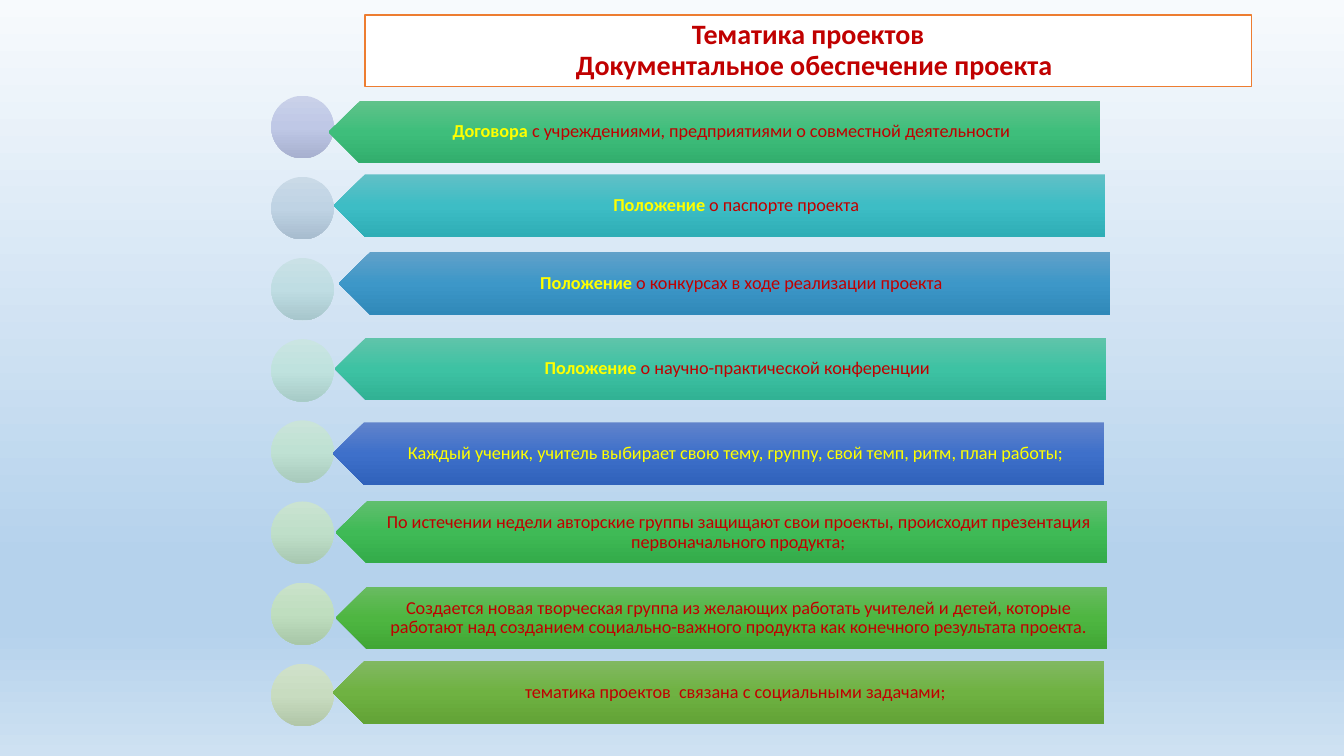
from dataclasses import dataclass

from lxml.etree import SubElement
from pptx import Presentation
from pptx.dml.color import RGBColor
from pptx.dml.fill import FillFormat
from pptx.enum.shapes import MSO_SHAPE as Shape
from pptx.enum.text import MSO_ANCHOR as Anchor, PP_ALIGN as Align
from pptx.oxml.ns import qn
from pptx.shapes.shapetree import GroupShapes
from pptx.slide import Slide
from pptx.text.text import _Paragraph as Paragraph
from pptx.util import Inches, Pt

Stops = tuple[tuple[int, str], ...]


@dataclass(frozen=True)
class Theme:
    font: str = "Calibri"
    title_size: float = 20
    body_size: float = 13
    red: str = "C00000"
    yellow: str = "FFFF00"
    white: str = "FFFFFF"
    orange: str = "ED7D31"
    sky: Stops = ((0, "F7FAFD"), (74, "B5D2EC"), (83, "B5D2EC"), (100, "CEE1F2"))


@dataclass(frozen=True)
class Topic:
    keyword: str
    detail: str
    left: float
    top: float
    arrow_colors: tuple[str, str, str]
    circle_colors: tuple[str, str, str]
    detail_color: str = Theme.red


THEME = Theme()

# Row geometry in inches
CIRCLE_LEFT, CIRCLE_TOP, CIRCLE_PITCH = 2.69, 0.95, 0.805
ROW_HEIGHT, ARROW_WIDTH, LABEL_SHIFT = 0.62, 7.65, 0.16

TITLE_LINES = ("Тематика проектов", "Документальное обеспечение проекта")
SECOND_LINE_INDENT = 0.12

TOPICS = [
    Topic("Договора", " с учреждениями, предприятиями о совместной деятельности",
          3.26, 1.0, ("60C28A", "3EBE7B", "32AE6D"), ("CAD1E9", "BFC8E6", "A7B0CF")),
    Topic("Положение", " о паспорте проекта",
          3.31, 1.73, ("61C0C6", "3DBDC5", "2FAEB6"), ("CADAE7", "BFD3E4", "A7BCCE")),
    Topic("Положение", " о конкурсах в ходе реализации проекта",
          3.36, 2.5, ("61A1C9", "3D97C8", "3089B9"), ("CAE1E6", "BFDDE3", "A7C6CC")),
    Topic("Положение", " о научно-практической конференции",
          3.32, 3.35, ("60C4AA", "3DC2A3", "31B294"), ("CAE5E2", "BFE2DE", "A7CBC7")),
    Topic("", "Каждый ученик, учитель выбирает свою тему, группу, свой темп, ритм, план работы;",
          3.3, 4.19, ("6183CB", "3E70CA", "3062BB"), ("CAE4D9", "BFE1D3", "A8CABC"),
          THEME.yellow),
    Topic("", "По истечении недели авторские группы защищают свои проекты, "
          "происходит презентация первоначального продукта;",
          3.33, 4.97, ("60BF6E", "3FBA56", "33AB49"), ("CAE3D1", "BFDFC9", "A8C8B1")),
    Topic("", "Создается новая творческая группа из желающих работать учителей и детей, "
          "которые работают над созданием социально-важного продукта "
          "как конечного результата проекта.",
          3.33, 5.82, ("69BB61", "4EB641", "41A735"), ("CAE2CA", "BFDEBF", "A8C7A8")),
    Topic("", "тематика проектов  связана с социальными задачами;",
          3.3, 6.56, ("81B861", "6FB242", "62A336"), ("D0E1CA", "C8DCC0", "B1C6A8")),
]


def set_gradient(fill: FillFormat, stops: Stops) -> None:
    """Fill from top to bottom, independent of the shape's rotation."""
    fill.gradient()
    fill.gradient_angle = 270
    gradient = fill._xPr.find(qn("a:gradFill"))
    gradient.set("rotWithShape", "0")
    stop_list = gradient.find(qn("a:gsLst"))
    for default_stop in list(stop_list):
        stop_list.remove(default_stop)
    for percent, color in stops:
        stop = SubElement(stop_list, qn("a:gs"), pos=str(percent * 1000))
        SubElement(stop, qn("a:srgbClr"), val=color)


def format_runs(paragraph: Paragraph, size: float, color: str, bold: bool) -> None:
    paragraph.alignment = Align.CENTER
    paragraph.line_spacing = 0.9
    for run in paragraph.runs:
        font = run.font
        font.name, font.size, font.bold = THEME.font, Pt(size), bold
        font.color.rgb = RGBColor.from_string(color)


def add_title(slide: Slide) -> None:
    title = slide.shapes.title
    title.left, title.top = Inches(3.62), Inches(0.15)
    title.width, title.height = Inches(8.79), Inches(0.71)
    title.fill.solid()
    title.fill.fore_color.rgb = RGBColor.from_string(THEME.white)
    title.line.color.rgb = RGBColor.from_string(THEME.orange)
    title.line.width = Pt(1)
    frame = title.text_frame
    frame.text = "\n".join(TITLE_LINES)
    frame.vertical_anchor = Anchor.MIDDLE
    for line in frame.paragraphs:
        line.space_before = Pt(0)
        format_runs(line, THEME.title_size, THEME.red, True)
    frame.paragraphs[1]._p.get_or_add_pPr().set("marL", str(Inches(SECOND_LINE_INDENT)))


def add_gradient_shape(shapes: GroupShapes, kind: Shape, left: float, top: float,
                       width: float, colors: tuple[str, str, str], rotation: float = 0) -> None:
    shape = shapes.add_shape(kind, Inches(left), Inches(top), Inches(width), Inches(ROW_HEIGHT))
    shape.rotation = rotation
    shape.shadow.inherit = False
    shape.line.fill.background()
    set_gradient(shape.fill, tuple(zip((0, 50, 100), colors)))


def add_label(shapes: GroupShapes, topic: Topic) -> None:
    label = shapes.add_textbox(Inches(topic.left + LABEL_SHIFT), Inches(topic.top),
                               Inches(ARROW_WIDTH - LABEL_SHIFT), Inches(ROW_HEIGHT))
    frame = label.text_frame
    frame.word_wrap = True
    frame.vertical_anchor = Anchor.MIDDLE
    frame.margin_left, frame.margin_right = Inches(0.27), Inches(0.1)
    frame.margin_top = frame.margin_bottom = Inches(0.05)
    paragraph = frame.paragraphs[0]
    paragraph.text = topic.keyword or topic.detail
    if topic.keyword:
        paragraph.add_run().text = topic.detail
    format_runs(paragraph, THEME.body_size, topic.detail_color, False)
    if topic.keyword:
        keyword_font = paragraph.runs[0].font
        keyword_font.bold = True
        keyword_font.color.rgb = RGBColor.from_string(THEME.yellow)


def add_topic(shapes: GroupShapes, index: int, topic: Topic) -> None:
    add_gradient_shape(shapes, Shape.OVAL, CIRCLE_LEFT, CIRCLE_TOP + index * CIRCLE_PITCH,
                       ROW_HEIGHT, topic.circle_colors)
    add_gradient_shape(shapes, Shape.PENTAGON, topic.left, topic.top,
                       ARROW_WIDTH, topic.arrow_colors, rotation=180)
    add_label(shapes, topic)


def main() -> None:
    # Slide and background
    deck = Presentation()
    deck.slide_width, deck.slide_height = Inches(13.33), Inches(7.5)
    slide = deck.slides.add_slide(deck.slide_layouts[5])
    set_gradient(slide.background.fill, THEME.sky)

    # Title
    add_title(slide)

    # Topic list
    topic_list = slide.shapes.add_group_shape()
    for index, topic in enumerate(TOPICS):
        add_topic(topic_list.shapes, index, topic)

    deck.save("out.pptx")


if __name__ == "__main__":
    main()
